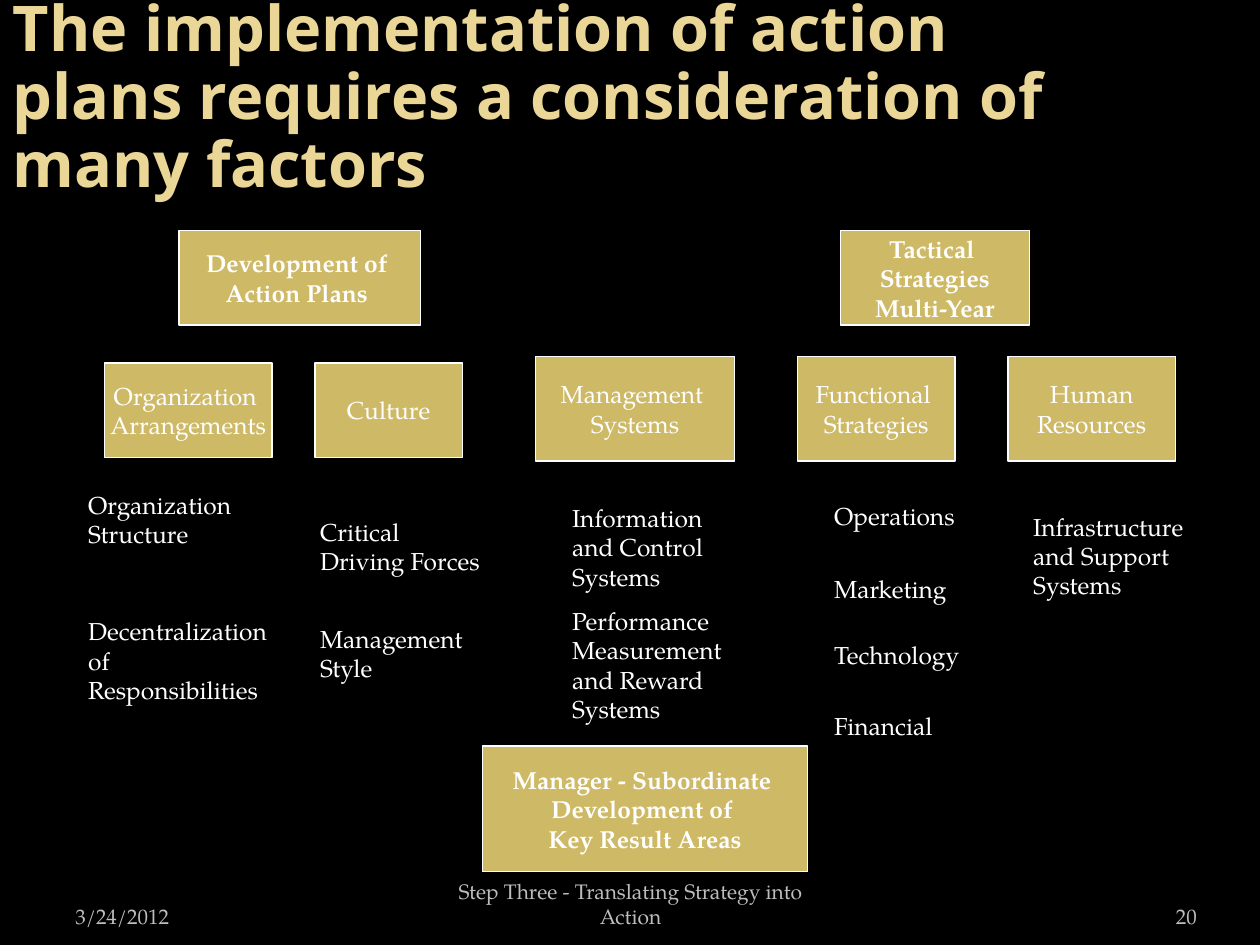
"""Build the slide on factors behind the implementation of action plans."""
from pptx import Presentation
from pptx.dml.color import RGBColor
from pptx.enum.shapes import MSO_SHAPE
from pptx.enum.text import MSO_ANCHOR, MSO_AUTO_SIZE, PP_ALIGN
from pptx.util import Inches, Pt

RECT = MSO_SHAPE.RECTANGLE
LEFT, CENTER, RIGHT = PP_ALIGN.LEFT, PP_ALIGN.CENTER, PP_ALIGN.RIGHT
TOP, MIDDLE, BOTTOM = MSO_ANCHOR.TOP, MSO_ANCHOR.MIDDLE, MSO_ANCHOR.BOTTOM
NO_FIT = MSO_AUTO_SIZE.NONE

BOXES = [
    (1.42, 1.83, 1.92, 0.75, "Development of \nAction Plans ", True),
    (6.67, 1.83, 1.5, 0.75, "Tactical \nStrategies\nMulti-Year", True),
    (0.83, 2.88, 1.33, 0.75, "Organization \nArrangements", False),
    (2.5, 2.88, 1.17, 0.75, "Culture", False),
    (4.25, 2.83, 1.58, 0.83, "Management \nSystems", False),
    (6.33, 2.83, 1.25, 0.83, "Functional \nStrategies", False),
    (8, 2.83, 1.33, 0.83, "Human\nResources", False),
    (3.83, 5.92, 2.58, 1,
     "Manager - Subordinate \nDevelopment of \nKey Result Areas", True),
]
FACTORS = [
    (0.58, 3.83, 1.5, 0.94, "Organization Structure"),
    (0.58, 4.83, 1.67, 0.82, "Decentralization of Responsibilities"),
    (2.42, 4.04, 1.58, 0.59, "Critical Driving Forces"),
    (2.42, 4.89, 1.5, 0.61, "Management Style"),
    (4.42, 3.93, 1.5, 0.82, "Information and Control Systems"),
    (4.42, 4.75, 1.5, 1.06, "Performance Measurement and Reward Systems"),
    (6.5, 3.92, 1.25, 0.36, "Operations"),
    (6.5, 4.5, 1.33, 0.36, "Marketing"),
    (6.5, 5.02, 1.25, 0.35, "Technology"),
    (6.5, 5.58, 1.08, 0.36, "Financial"),
    (8.08, 4, 1.58, 1.18, "Infrastructure and Support Systems"),
]
FOOTERS = [
    (0.5, 2.33, "3/24/2012", LEFT, 0.1),
    (3.42, 3.17, "Step Three - Translating Strategy into Action", CENTER, 0.1),
    (8.67, 0.83, "20", RIGHT, 0),
]


def rgb(value):
    """Return the colour for a hex string."""
    return RGBColor.from_string(value)


def write(sp, text, font="TeX Gyre Pagella", size=14, color="FFFFFF", bold=False,
          align=LEFT, anchor=TOP, wrap=True, inset=(0.12, 0.06), spacing=None):
    """Fill a shape with one formatted paragraph per line of text."""
    tf = sp.text_frame
    tf.auto_size = NO_FIT
    tf.word_wrap = wrap
    tf.vertical_anchor = anchor
    tf.margin_left = tf.margin_right = Inches(inset[0])
    tf.margin_top = tf.margin_bottom = Inches(inset[1])
    for i, line in enumerate(text.split("\n")):
        p = tf.paragraphs[0] if i == 0 else tf.add_paragraph()
        p.alignment = align
        p.line_spacing = spacing
        r = p.add_run()
        r.text = line
        r.font.name = font
        r.font.size = Pt(size)
        r.font.bold = bold
        r.font.color.rgb = rgb(color)


class Deck:
    """Hold the palette and the current slide."""

    gold, white, pale, grey, black = "CEB966", "FFFFFF", "EAD696", "BDBDBD", "000000"

    def __init__(self, prs):
        """Add a title-only slide with a dark background."""
        self.s = prs.slides.add_slide(prs.slide_layouts[5])
        fill = self.s.background.fill
        fill.solid()
        fill.fore_color.rgb = rgb(self.black)

    def title(self, x, y, w, h, text):
        """Place and format the title placeholder."""
        sp = self.s.shapes.title
        sp.left, sp.top, sp.width, sp.height = map(Inches, (x, y, w, h))
        write(sp, text, font="Noto Sans", size=36, color=self.pale, bold=True,
              anchor=MIDDLE, inset=(0.1, 0.05), spacing=0.9)

    def box(self, x, y, w, h, text, bold):
        """Add a gold box with centred text."""
        sp = self.s.shapes.add_shape(RECT, *map(Inches, (x, y, w, h)))
        sp.shadow.inherit = False
        sp.fill.solid()
        sp.fill.fore_color.rgb = rgb(self.gold)
        sp.line.color.rgb = rgb(self.white)
        sp.line.width = Pt(0.75)
        write(sp, text, bold=bold, align=CENTER, anchor=MIDDLE, wrap=False)

    def label(self, x, y, w, h, text, **fmt):
        """Add a text box."""
        sp = self.s.shapes.add_textbox(*map(Inches, (x, y, w, h)))
        write(sp, text, **fmt)


def main():
    """Build and save the presentation."""
    prs = Presentation()
    prs.slide_width, prs.slide_height = Inches(10), Inches(7.5)
    deck = Deck(prs)
    deck.title(0, 0.25, 8.5, 1.08, "The implementation of action plans "
               "requires a consideration of many factors")
    for box in BOXES:
        deck.box(*box)
    for factor in FACTORS:
        deck.label(*factor)
    for x, w, text, align, side in FOOTERS:
        deck.label(x, 7.02, w, 0.4, text, size=12, color=deck.grey,
                   align=align, anchor=BOTTOM, inset=(side, 0.05))
    prs.save("out.pptx")


if __name__ == "__main__":
    main()
